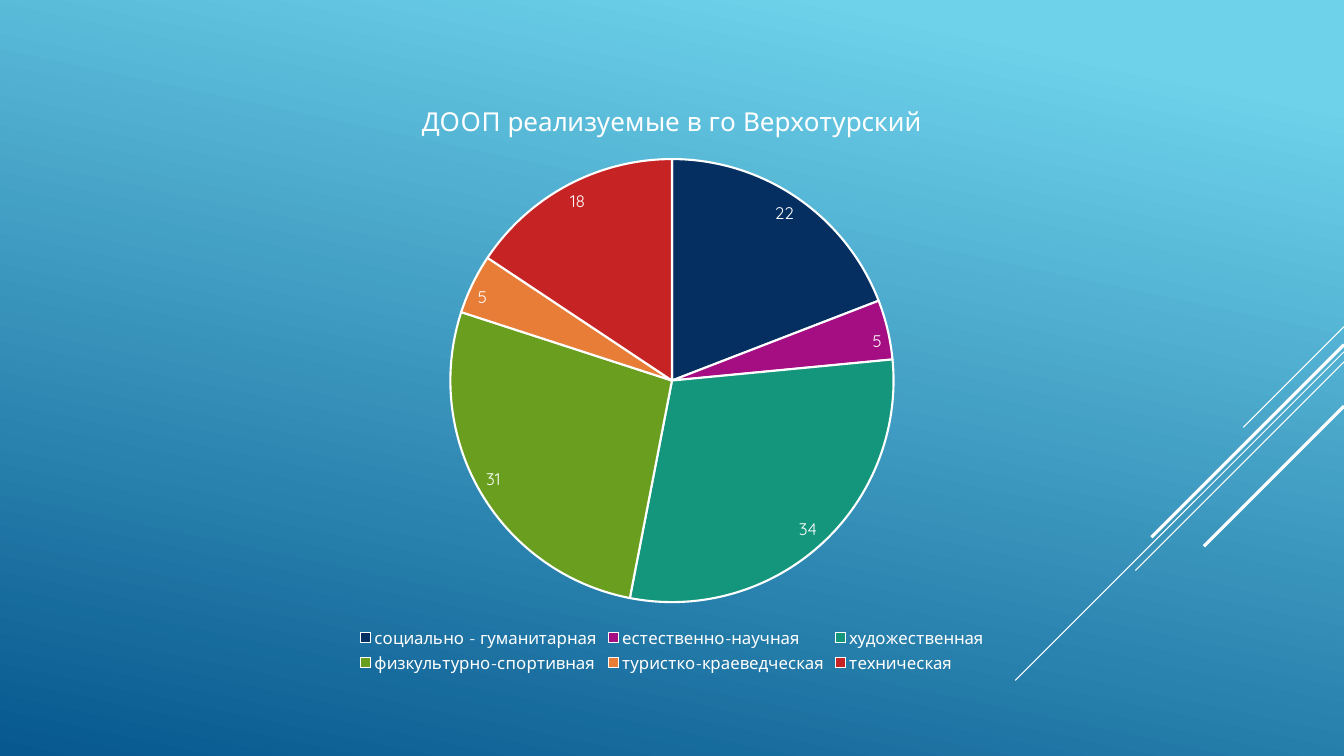
from dataclasses import dataclass

from pptx import Presentation
from pptx import util as u
from pptx.chart.data import CategoryChartData
from pptx.dml.color import RGBColor
from pptx.enum import chart as ch
from pptx.enum import shapes
from pptx.oxml.ns import qn


@dataclass(frozen=True)
class Theme:
    font: str = "Quicksand"
    light: str = "FFFFFF"
    sky: str = "6ED2EB"
    deep: str = "06588E"
    slices: tuple = ("052F61", "A50E82", "14967C", "6A9E1F", "E87D37", "C62324")
    title_size: float = 18.6
    label_size: float = 12
    base_size: float = 10
    thin: float = 0.75
    thick: float = 2.25
    slice_border: float = 1.5


THEME = Theme()
WIDTH, HEIGHT = 13.33, 7.5
HEADING = "ДООП реализуемые в го Верхотурский"
PROGRAMS = {
    "социально - гуманитарная": 22,
    "естественно-научная": 5,
    "художественная": 34,
    "физкультурно-спортивная": 31,
    "туристко-краеведческая": 5,
    "техническая": 18,
}
RAYS = (
    (3.24, 1, THEME.thin),
    (3.49, 3.26, THEME.thin),
    (3.59, 2.07, THEME.thin),
    (3.42, 1.91, THEME.thick),
    (4.03, 1.39, THEME.thick),
)


def rgb(value):
    return RGBColor.from_string(value)


def style_font(font, size, color=THEME.light):
    font.name = THEME.font
    font.size = u.Pt(size)
    font.bold = False
    font.color.rgb = rgb(color)


def write_text(frame, content, **style):
    paragraph = frame.paragraphs[0]
    run = paragraph.add_run()
    run.text = content
    style_font(run.font, **style)


def paint_background(slide):
    fill = slide.background.fill
    fill.gradient()
    fill.gradient_angle = 258
    stops = zip(fill.gradient_stops, (0.1, 1), (THEME.sky, THEME.deep))
    for stop, position, color in stops:
        stop.position = position
        stop.color.rgb = rgb(color)


def draw_rays(slide, right):
    for top, reach, weight in RAYS:
        ray = slide.shapes.add_connector(
            shapes.MSO_CONNECTOR.STRAIGHT,
            u.Inches(right), u.Inches(top),
            u.Inches(right - reach), u.Inches(top + reach),
        )
        ray.line.color.rgb = rgb(THEME.light)
        ray.line.width = u.Pt(weight)
        properties = ray._element.spPr
        properties.append(properties.makeelement(qn("a:effectLst"), {}))


def draw_programs(slide, left, top, width, height):
    programs = CategoryChartData()
    programs.categories = list(PROGRAMS)
    programs.add_series(HEADING, list(PROGRAMS.values()))
    pie = slide.shapes.add_chart(
        ch.XL_CHART_TYPE.PIE,
        u.Inches(left), u.Inches(top), u.Inches(width), u.Inches(height),
        programs,
    ).chart
    style_font(pie.font, THEME.base_size)

    pie.has_title = True
    write_text(pie.chart_title.text_frame, HEADING, size=THEME.title_size)
    pie.chart_title.include_in_layout = False

    pie.has_legend = True
    pie.legend.position = ch.XL_LEGEND_POSITION.BOTTOM
    pie.legend.include_in_layout = False
    style_font(pie.legend.font, THEME.label_size)

    plot = pie.plots[0]
    plot.vary_by_categories = True
    plot.has_data_labels = True
    values = plot.data_labels
    values.show_value = True
    values.show_percentage = False
    values.position = ch.XL_LABEL_POSITION.INSIDE_END
    style_font(values.font, THEME.label_size)

    for index, color in enumerate(THEME.slices):
        piece = plot.series[0].points[index].format
        piece.fill.solid()
        piece.fill.fore_color.rgb = rgb(color)
        piece.line.color.rgb = rgb(THEME.light)
        piece.line.width = u.Pt(THEME.slice_border)


def main():
    deck = Presentation()
    deck.slide_width, deck.slide_height = u.Inches(WIDTH), u.Inches(HEIGHT)
    slide = deck.slides.add_slide(deck.slide_layouts[6])
    paint_background(slide)
    draw_rays(slide, WIDTH)
    draw_programs(slide, WIDTH / 6, 0.79, WIDTH * 2 / 3, 5.93)
    deck.save("out.pptx")


if __name__ == "__main__":
    main()
